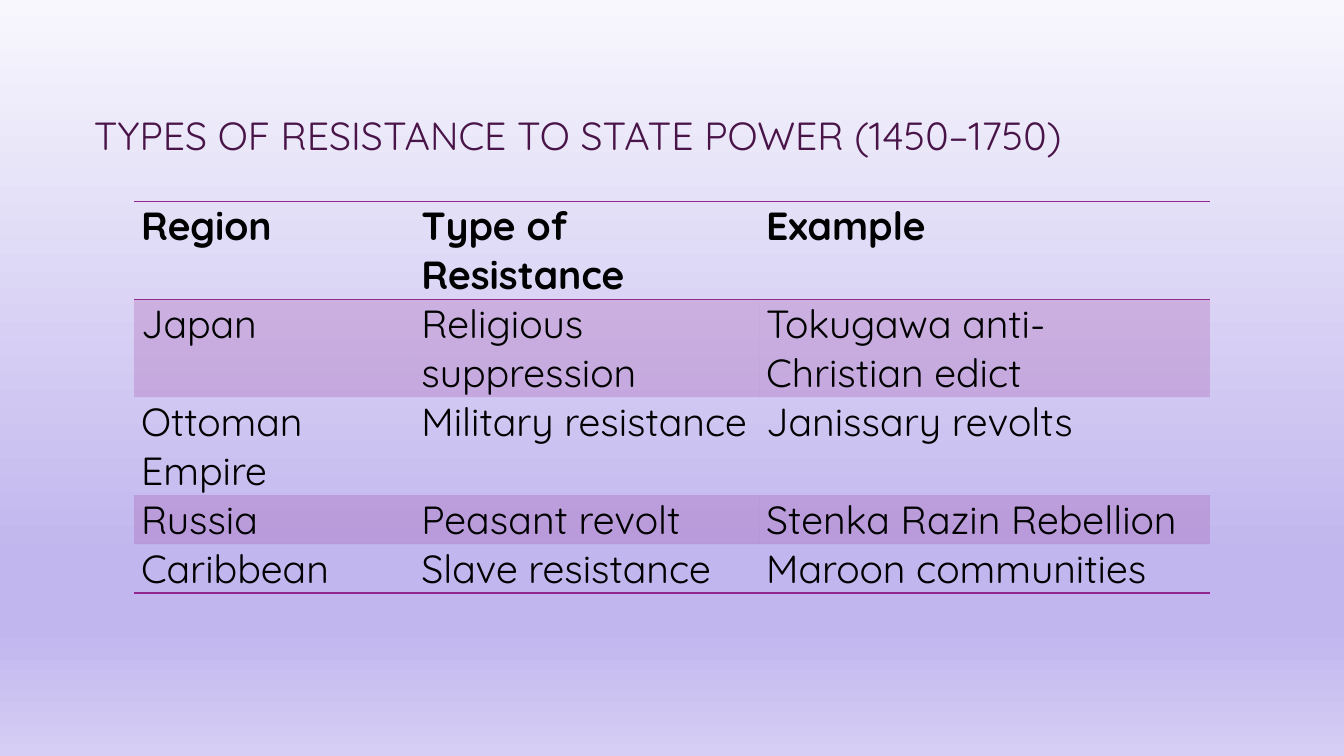
from lxml import etree
from pptx import Presentation
from pptx.dml.color import RGBColor
from pptx.enum.text import MSO_ANCHOR, PP_ALIGN
from pptx.oxml.ns import qn
from pptx.util import Inches, Pt

BOTTOM, LEFT = MSO_ANCHOR.BOTTOM, PP_ALIGN.LEFT
PLUM = RGBColor(0x49, 0x14, 0x47)
PURPLE = RGBColor(0x92, 0x27, 0x8F)
BLACK = RGBColor(0, 0, 0)
SKY = [
    (0, RGBColor(0xF8, 0xF7, 0xFD)),
    (74, RGBColor(0xC1, 0xB6, 0xEE)),
    (83, RGBColor(0xC1, 0xB6, 0xEE)),
    (100, RGBColor(0xD6, 0xCE, 0xF4)),
]
FONT, TEXT_SIZE = "Quicksand", Pt(28)
NO_STYLE = "{2D5ABB26-0587-4C30-8999-92F81FD0307C}"

LINE_HEIGHT = 0.48
COLUMN_WIDTHS = [2.78, 3.42, 4.47]
# Lines of text in the row, then its cells
RESISTANCE = [
    (2, ["Region", "Type of Resistance", "Example"]),
    (2, ["Japan", "Religious suppression", "Tokugawa anti-Christian edict"]),
    (2, ["Ottoman Empire", "Military resistance", "Janissary revolts"]),
    (1, ["Russia", "Peasant revolt", "Stenka Razin Rebellion"]),
    (1, ["Caribbean", "Slave resistance", "Maroon communities"]),
]


def style_text(paragraph, color, bold=False):
    for run in paragraph.runs:
        run.font.name, run.font.size = FONT, TEXT_SIZE
        run.font.color.rgb, run.font.bold = color, bold


def add_rule(cell, side, position):
    """Draw a 1 pt purple border on one side of a table cell."""
    rule = etree.Element(qn("a:" + side), w=str(Pt(1)))
    paint = etree.SubElement(rule, qn("a:solidFill"))
    etree.SubElement(paint, qn("a:srgbClr"), val=str(PURPLE))
    cell._tc.get_or_add_tcPr().insert(position, rule)


prs = Presentation()
prs.slide_width, prs.slide_height = Inches(13.33), Inches(7.5)
slide = prs.slides.add_slide(prs.slide_layouts[5])

# Lavender gradient from top to bottom
backdrop = slide.background.fill
backdrop.gradient()
backdrop.gradient_angle = 270
stops = slide.background._cSld.find(".//" + qn("a:gsLst"))
for old_stop in list(stops):
    stops.remove(old_stop)
for percent, color in SKY:
    stop = etree.SubElement(stops, qn("a:gs"), pos=str(percent * 1000))
    etree.SubElement(stop, qn("a:srgbClr"), val=str(color))

# Title
title = slide.shapes.title
title.left, title.top = Inches(0.83), Inches(0.75)
title.width, title.height = Inches(11.67), Inches(0.88)
title.text_frame.text = "TYPES OF RESISTANCE TO STATE POWER (1450–1750)"
title.text_frame.vertical_anchor = BOTTOM
heading = title.text_frame.paragraphs[0]
heading.alignment, heading.line_spacing = LEFT, 0.9
style_text(heading, PLUM)

# Table of resistance by region
frame = slide.shapes.add_table(
    len(RESISTANCE), len(COLUMN_WIDTHS), Inches(1.33), Inches(2),
    Inches(sum(COLUMN_WIDTHS)),
    Inches(LINE_HEIGHT * sum(lines for lines, _ in RESISTANCE)))
table = frame.table
table._tbl.tblPr.find(qn("a:tableStyleId")).text = NO_STYLE
for column, width in zip(table.columns, COLUMN_WIDTHS):
    column.width = Inches(width)

for r, (lines, entries) in enumerate(RESISTANCE):
    table.rows[r].height = Inches(LINE_HEIGHT * lines)
    for c, entry in enumerate(entries):
        cell = table.cell(r, c)
        cell.margin_left = cell.margin_right = Inches(0.07)
        cell.margin_top = cell.margin_bottom = 0
        cell.text_frame.text = entry
        style_text(cell.text_frame.paragraphs[0], BLACK, bold=r == 0)

        # Every other row is tinted with 20 % purple
        if r % 2:
            cell.fill.solid()
            cell.fill.fore_color.rgb = PURPLE
            tint = cell._tc.tcPr.find(".//" + qn("a:srgbClr"))
            etree.SubElement(tint, qn("a:alpha"), val="20000")
        else:
            cell.fill.background()

        # Rules around the header and below the last row
        if r == 0:
            add_rule(cell, "lnT", 0)
            add_rule(cell, "lnB", 1)
        elif r == len(RESISTANCE) - 1:
            add_rule(cell, "lnB", 0)

prs.save("out.pptx")
